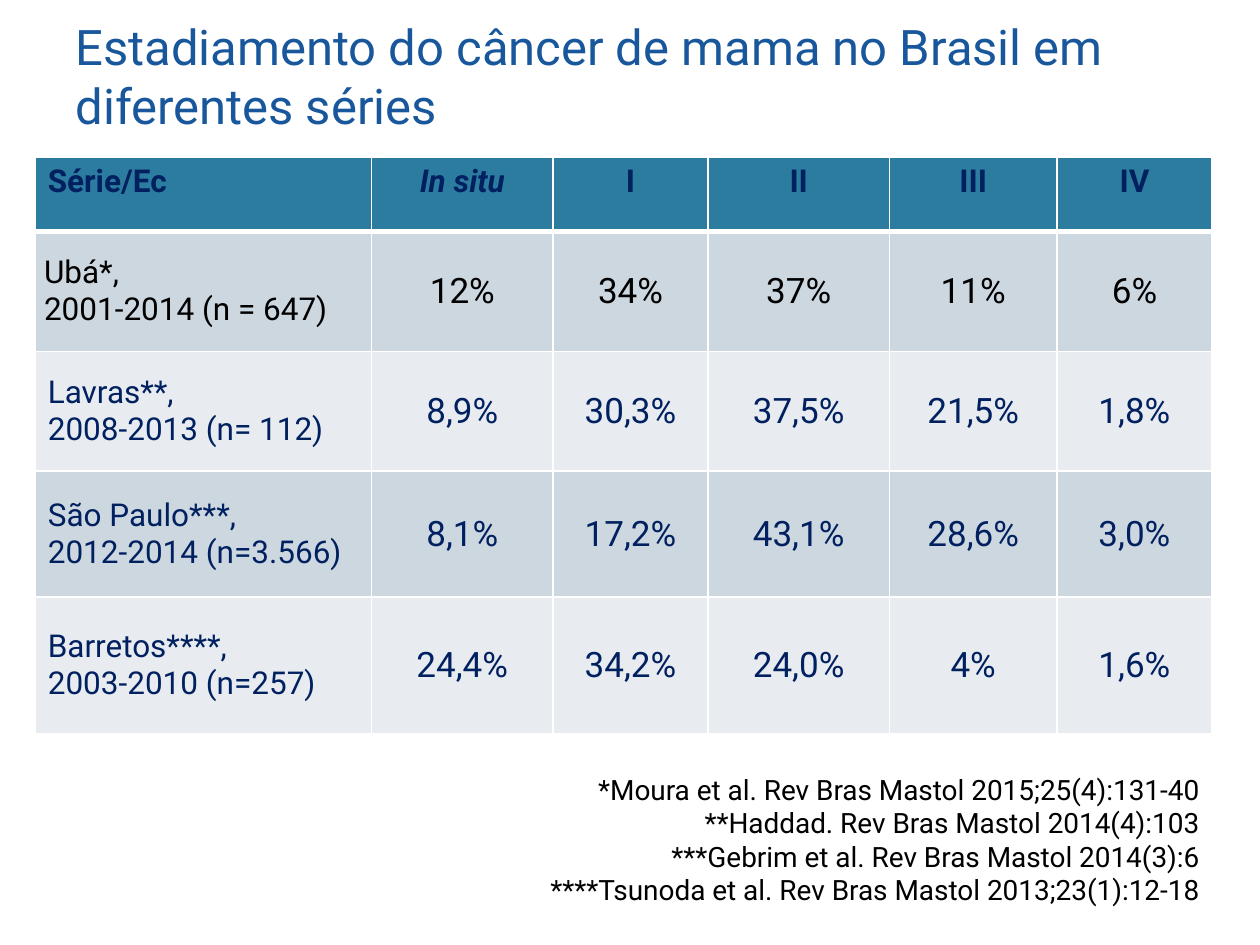
from lxml.etree import SubElement
from pptx import Presentation
from pptx.dml.color import RGBColor
from pptx.enum.text import MSO_ANCHOR as Anchor, MSO_AUTO_SIZE as Fit, PP_ALIGN as Align
from pptx.oxml import parse_xml
from pptx.oxml.ns import nsdecls, qn
from pptx.util import Pt

FONT = "Roboto"
NAVY, BLACK, WHITE = "002060", "000000", "FFFFFF"
HEAD, BANDS = "2C7C9F", ("CDD7DF", "E8ECF0")

COLS = [267, 144, 123, 144, 133, 123]
ROWS = [59, 95, 95, 100, 108]
DATA = [
    ["Série/Ec", "In situ", "I", "II", "III", "IV"],
    ["Ubá*,\n2001-2014 (n = 647)", "12%", "34%", "37%", "11%", "6%"],
    ["Lavras**,\n2008-2013 (n= 112)", "8,9%", "30,3%", "37,5%", "21,5%", "1,8%"],
    ["São Paulo***,\n2012-2014 (n=3.566)", "8,1%", "17,2%", "43,1%", "28,6%", "3,0%"],
    ["Barretos****,\n2003-2010 (n=257)", "24,4%", "34,2%", "24,0%", "4%", "1,6%"],
]
REFS = [
    "*Moura et al. Rev Bras Mastol 2015;25(4):131-40",
    "**Haddad. Rev Bras Mastol 2014(4):103",
    "***Gebrim et al. Rev Bras Mastol 2014(3):6",
    "****Tsunoda et al. Rev Bras Mastol 2013;23(1):12-18",
]


def px(n):
    """100 px to the inch."""
    return n * 9144


def rgb(code):
    return RGBColor.from_string(code)


def style(frame, size, color, align=Align.LEFT, bold=False, italic=False):
    for para in frame.paragraphs:
        para.alignment = align
        for run in para.runs:
            font = run.font
            font.name, font.size, font.color.rgb = FONT, Pt(size), rgb(color)
            font.bold, font.italic = bold, italic


def edge(cell, base):
    """White borders; base is the width of the bottom one in points."""
    props = cell._tc.get_or_add_tcPr()
    for i, (side, width) in enumerate(zip("LRTB", (1, 1, 1, base))):
        line = parse_xml(f'<a:ln{side} {nsdecls("a")} w="{Pt(width)}"/>')
        fill = SubElement(line, qn("a:solidFill"))
        SubElement(fill, qn("a:srgbClr"), val=WHITE)
        props.insert(i, line)


def add_title(slide, x, y, w, h):
    title = slide.shapes.title
    title.left, title.top, title.width, title.height = map(px, (x, y, w, h))
    frame = title.text_frame
    frame.text = "Estadiamento do câncer de mama no Brasil em diferentes séries"
    frame.auto_size, frame.vertical_anchor = Fit.NONE, Anchor.TOP
    style(frame, 28, "18579B")


def add_grid(slide, x, y):
    box = map(px, (x, y, sum(COLS), sum(ROWS)))
    table = slide.shapes.add_table(len(ROWS), len(COLS), *box).table
    for col, w in zip(table.columns, COLS):
        col.width = px(w)
    for row, h in zip(table.rows, ROWS):
        row.height = px(h)

    for r, row in enumerate(DATA):
        head, first = r == 0, r == 1
        for c, text in enumerate(row):
            cell = table.cell(r, c)
            cell.text = text
            cell.vertical_anchor = Anchor.TOP if head else Anchor.MIDDLE
            # The first series has tighter margins
            cell.margin_left = cell.margin_right = px(7 if first else 10)
            cell.margin_top = cell.margin_bottom = px(0 if first else 5)
            cell.fill.solid()
            cell.fill.fore_color.rgb = rgb(HEAD if head else BANDS[(r - 1) % 2])
            edge(cell, 3 if head else 1)
            style(cell.text_frame, 18 if head or c == 0 else 20,
                  BLACK if first else NAVY,
                  Align.CENTER if c else Align.LEFT,
                  bold=head, italic=head and c == 1)


def add_refs(slide, x, y, w, h):
    frame = slide.shapes.add_textbox(*map(px, (x, y, w, h))).text_frame
    frame.word_wrap = True
    frame.text = "\n".join(REFS)
    style(frame, 16, BLACK, Align.RIGHT)


def main():
    deck = Presentation()
    deck.slide_width, deck.slide_height = px(1000), px(750)
    slide = deck.slides.add_slide(deck.slide_layouts[5])
    add_title(slide, 50, 8, 908, 104)
    add_grid(slide, 28, 125)
    add_refs(slide, 295, 608, 667, 118)
    deck.save("out.pptx")


if __name__ == "__main__":
    main()
